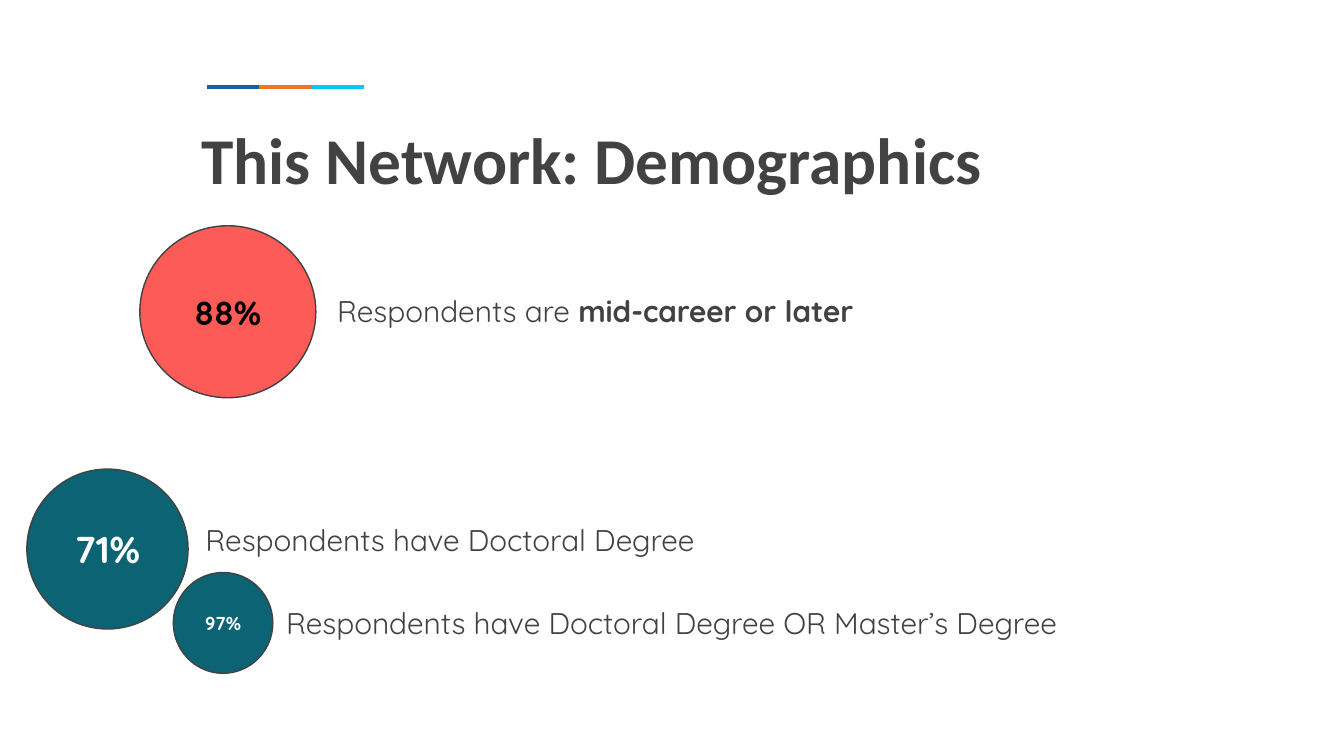
from dataclasses import dataclass

from lxml.etree import SubElement
from pptx import Presentation
from pptx.dml.color import RGBColor
from pptx.enum.shapes import MSO_CONNECTOR as CONNECTOR, MSO_SHAPE as SHAPE
from pptx.enum.text import MSO_ANCHOR as ANCHOR, PP_ALIGN as ALIGN
from pptx.oxml.ns import qn
from pptx.util import Inches, Pt


@dataclass(frozen=True)
class Theme:
    ink: str = "424242"
    black: str = "000000"
    white: str = "FFFFFF"
    coral: str = "FD5B58"
    teal: str = "0B6374"
    accents: tuple = ("145FA6", "F1761A", "00C9FF")
    title_font: str = "Calibri"
    body_font: str = "Quicksand"
    title_size: int = 35
    body_size: int = 16
    outline_width: float = 0.75
    accent_width: float = 2.25


THEME = Theme()


def set_frame(frame, anchor, side=0.1, end=0.1):
    settings = {
        "word_wrap": True,
        "vertical_anchor": anchor,
        "margin_left": Inches(side),
        "margin_right": Inches(side),
        "margin_top": Inches(end),
        "margin_bottom": Inches(end),
    }
    for name, value in settings.items():
        setattr(frame, name, value)


def add_run(paragraph, text, size, color=THEME.ink, font=THEME.body_font, bold=False):
    run = paragraph.add_run()
    run.text = text
    settings = {"name": font, "size": Pt(size), "bold": bold}
    for name, value in settings.items():
        setattr(run.font, name, value)
    run.font.color.rgb = RGBColor.from_string(color)


def add_accent_bar(slide, left, top, segment):
    for index, color in enumerate(THEME.accents):
        start = left + index * segment
        line = slide.shapes.add_connector(
            CONNECTOR.STRAIGHT, Inches(start), Inches(top), Inches(start + segment), Inches(top)
        )
        line.line.color.rgb = RGBColor.from_string(color)
        line.line.width = Pt(THEME.accent_width)
        SubElement(line._element.spPr, qn("a:effectLst"))


def add_title(slide, text):
    box = slide.shapes.add_textbox(Inches(1.43), Inches(0.67), Inches(7.97), Inches(1.09))
    set_frame(box.text_frame, ANCHOR.MIDDLE, side=0.07, end=0.04)
    paragraph = box.text_frame.paragraphs[0]
    paragraph.line_spacing = 0.9
    add_run(paragraph, text, THEME.title_size, font=THEME.title_font, bold=True)


def add_bubble(slide, bounds, label, size, fill, color):
    bubble = slide.shapes.add_shape(SHAPE.OVAL, *map(Inches, bounds))
    bubble.shadow.inherit = False
    bubble.fill.solid()
    bubble.fill.fore_color.rgb = RGBColor.from_string(fill)
    bubble.line.color.rgb = RGBColor.from_string(THEME.ink)
    bubble.line.width = Pt(THEME.outline_width)
    set_frame(bubble.text_frame, ANCHOR.MIDDLE)
    paragraph = bubble.text_frame.paragraphs[0]
    paragraph.alignment = ALIGN.CENTER
    add_run(paragraph, label, size, color, bold=True)


def add_statement(slide, left, top, text, emphasis=""):
    box = slide.shapes.add_textbox(Inches(left), Inches(top), Inches(6.15), Inches(0.47))
    set_frame(box.text_frame, ANCHOR.TOP)
    paragraph = box.text_frame.paragraphs[0]
    add_run(paragraph, text, THEME.body_size)
    if emphasis:
        add_run(paragraph, emphasis, THEME.body_size, bold=True)


def main():
    # Widescreen slide, 16:9
    presentation = Presentation()
    presentation.slide_width = Inches(10)
    presentation.slide_height = Inches(10 * 9 / 16)
    slide = presentation.slides.add_slide(presentation.slide_layouts[6])

    # Heading
    add_accent_bar(slide, left=1.54, top=0.65, segment=0.39)
    add_title(slide, "This Network: Demographics")

    # Career stage
    add_bubble(slide, (1.04, 1.68, 1.31, 1.28), "88%", 18, THEME.coral, THEME.black)
    add_statement(slide, 2.41, 2.08, "Respondents are ", "mid-career or later")

    # Degrees held
    add_bubble(slide, (0.2, 3.49, 1.2, 1.19), "71%", 20, THEME.teal, THEME.white)
    add_statement(slide, 1.43, 3.78, "Respondents have Doctoral Degree")
    add_bubble(slide, (1.29, 4.26, 0.74, 0.75), "97%", 10, THEME.teal, THEME.white)
    add_statement(slide, 2.03, 4.4, "Respondents have Doctoral Degree OR Master’s Degree")

    presentation.save("out.pptx")


if __name__ == "__main__":
    main()
